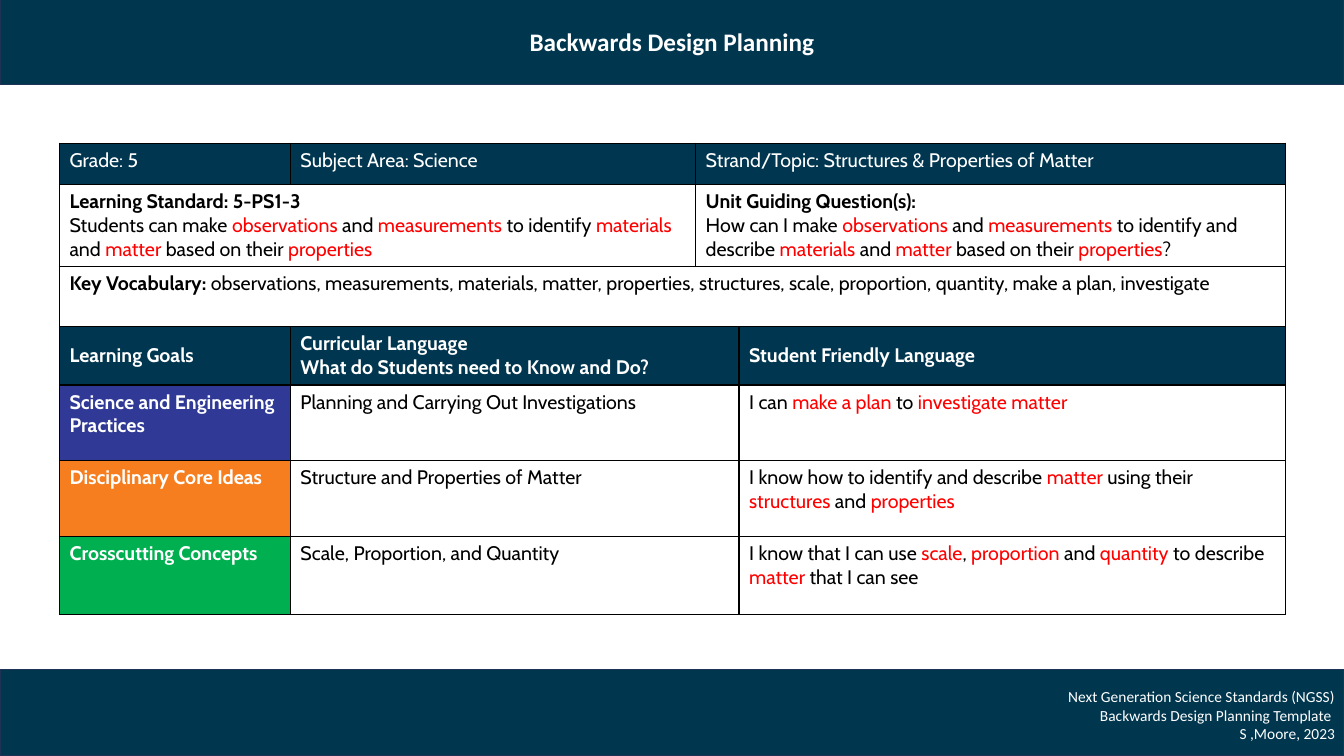
from lxml import etree
from pptx import Presentation
from pptx.dml.color import RGBColor
from pptx.enum.shapes import MSO_SHAPE
from pptx.enum.text import MSO_ANCHOR, PP_ALIGN
from pptx.oxml import parse_xml
from pptx.oxml.ns import nsdecls
from pptx.util import Inches, Pt

RECTANGLE = MSO_SHAPE.RECTANGLE
TOP, MIDDLE = MSO_ANCHOR.TOP, MSO_ANCHOR.MIDDLE
CENTER, RIGHT = PP_ALIGN.CENTER, PP_ALIGN.RIGHT

COLORS = {
    "band": "00374F",
    "band_line": "1E3256",
    "header": "00364F",
    "practices": "303A96",
    "ideas": "F67E1F",
    "concepts": "00B050",
    "white": "FFFFFF",
    "black": "000000",
    "red": "FF0000",
}
TABLE_FONT = "Cabin"
BAND_FONT = "Calibri"
SLIDE_WIDTH = 13.33
BAND_HEIGHT = 0.86

COLUMN_WIDTHS = [2.29, 4.02, 0.43, 5.42]
ROW_HEIGHTS = [0.41, 0.81, 0.6, 0.58, 0.75, 0.75, 0.78]

# Each cell: first column, column span, fill, paragraphs.
# Text before "#" is bold; text between asterisks is red.
ROWS = [
    [
        (0, 1, "header", ["Grade: 5"]),
        (1, 1, "header", ["Subject Area: Science"]),
        (2, 2, "header", ["Strand/Topic: Structures & Properties of Matter"]),
    ],
    [
        (0, 2, "white", [
            "Learning Standard: 5-PS1-3#",
            "Students can make *observations* and *measurements* to identify "
            "*materials *and* matter* based on their *properties*",
        ]),
        (2, 2, "white", [
            "Unit Guiding Question(s):#",
            "How can I make *observations* and *measurements* to identify and "
            "describe *materials* and *matter* based on their *properties*?",
        ]),
    ],
    [
        (0, 4, "white", [
            "Key Vocabulary: #observations, measurements, materials, matter, "
            "properties, structures, scale, proportion, quantity, "
            "make a plan, investigate",
        ]),
    ],
    [
        (0, 1, "header", ["Learning Goals#"]),
        (1, 2, "header", ["Curricular Language#",
                          "What do Students need to Know and Do?#"]),
        (3, 1, "header", ["Student Friendly Language#"]),
    ],
    [
        (0, 1, "practices", ["Science and Engineering Practices#"]),
        (1, 2, "white", ["Planning and Carrying Out Investigations"]),
        (3, 1, "white", ["I can *make a plan* to *investigate matter*"]),
    ],
    [
        (0, 1, "ideas", ["Disciplinary Core Ideas#"]),
        (1, 2, "white", ["Structure and Properties of Matter"]),
        (3, 1, "white", ["I know how to identify and describe *matter* using "
                         "their *structures* and *properties*"]),
    ],
    [
        (0, 1, "concepts", ["Crosscutting Concepts#"]),
        (1, 2, "white", ["Scale, Proportion, and Quantity"]),
        (3, 1, "white", ["I know that I can use *scale*, *proportion* and "
                         "*quantity* to describe *matter *that I can see"]),
    ],
]
GOALS_HEADER_ROW = 3


def color(name):
    return RGBColor.from_string(COLORS[name])


def write_marked_text(paragraph, marked_text, base_color):
    """Add runs: bold before "#", red between asterisks."""
    paragraph.font.name = TABLE_FONT
    paragraph.font.size = Pt(14)
    bold_part, _, plain_part = marked_text.rpartition("#")
    pieces = [(bold_part, True, base_color)]
    for index, piece in enumerate(plain_part.split("*")):
        pieces.append((piece, False, "red" if index % 2 else base_color))
    for text, bold, color_name in pieces:
        if text:
            run = paragraph.add_run()
            run.text = text
            run.font.bold = bold
            run.font.color.rgb = color(color_name)


presentation = Presentation()
presentation.slide_width = Inches(SLIDE_WIDTH)
presentation.slide_height = Inches(7.5)
title_only_layout = presentation.slide_layouts[5]
slide = presentation.slides.add_slide(title_only_layout)

# Planning table
table = slide.shapes.add_table(
    len(ROW_HEIGHTS), len(COLUMN_WIDTHS), Inches(0.59), Inches(1.42),
    Inches(sum(COLUMN_WIDTHS)), Inches(sum(ROW_HEIGHTS))).table
table.first_row = False
table.horz_banding = False
for column, width in zip(table.columns, COLUMN_WIDTHS):
    column.width = Inches(width)
for row, height in zip(table.rows, ROW_HEIGHTS):
    row.height = Inches(height)

for cell in table.iter_cells():
    properties = cell._tc.get_or_add_tcPr()
    for side in ("lnL", "lnR", "lnT", "lnB"):
        properties.append(parse_xml(
            f'<a:{side} {nsdecls("a")} w="12700"><a:solidFill>'
            f'<a:srgbClr val="{COLORS["black"]}"/></a:solidFill></a:{side}>'))

for row_index, row_cells in enumerate(ROWS):
    for first_column, span, fill, texts in row_cells:
        cell = table.cell(row_index, first_column)
        if span > 1:
            cell.merge(table.cell(row_index, first_column + span - 1))
        cell.fill.solid()
        cell.fill.fore_color.rgb = color(fill)
        cell.vertical_anchor = MIDDLE if row_index == GOALS_HEADER_ROW else TOP
        base_color = "black" if fill == "white" else "white"
        for index, text in enumerate(texts):
            frame = cell.text_frame
            paragraph = frame.add_paragraph() if index else frame.paragraphs[0]
            write_marked_text(paragraph, text, base_color)

# Bands: the title fills the top one
footer_band = slide.shapes.add_shape(
    RECTANGLE, 0, Inches(6.64), Inches(SLIDE_WIDTH), Inches(BAND_HEIGHT))
footer_band.shadow.inherit = False
title = slide.shapes.title
title.left, title.top = Inches(0), Inches(-0.02)
title.width, title.height = Inches(SLIDE_WIDTH), Inches(BAND_HEIGHT)
for band in (footer_band, title):
    band.fill.solid()
    band.fill.fore_color.rgb = color("band")
    band.line.color.rgb = color("band_line")
    band.line.width = Pt(1)

title.text_frame.text = "Backwards Design Planning"
title.text_frame.vertical_anchor = MIDDLE
heading = title.text_frame.paragraphs[0]
heading.alignment = CENTER
heading.font.name = BAND_FONT
heading.font.size = Pt(18)
heading.font.bold = True
heading.font.color.rgb = color("white")

# Credit lines in the footer
credit = slide.shapes.add_textbox(
    Inches(6.66), Inches(6.77), Inches(6.68), Inches(0.66))
credit.text_frame.word_wrap = True
credit.text_frame.text = "\n".join([
    "Next Generation Science Standards (NGSS)",
    "Backwards Design Planning Template ",
    "S ,Moore, 2023",
])
for paragraph in credit.text_frame.paragraphs:
    paragraph.alignment = RIGHT
    paragraph.font.name = BAND_FONT
    paragraph.font.size = Pt(11)
    paragraph.font.color.rgb = color("white")

presentation.save("out.pptx")
